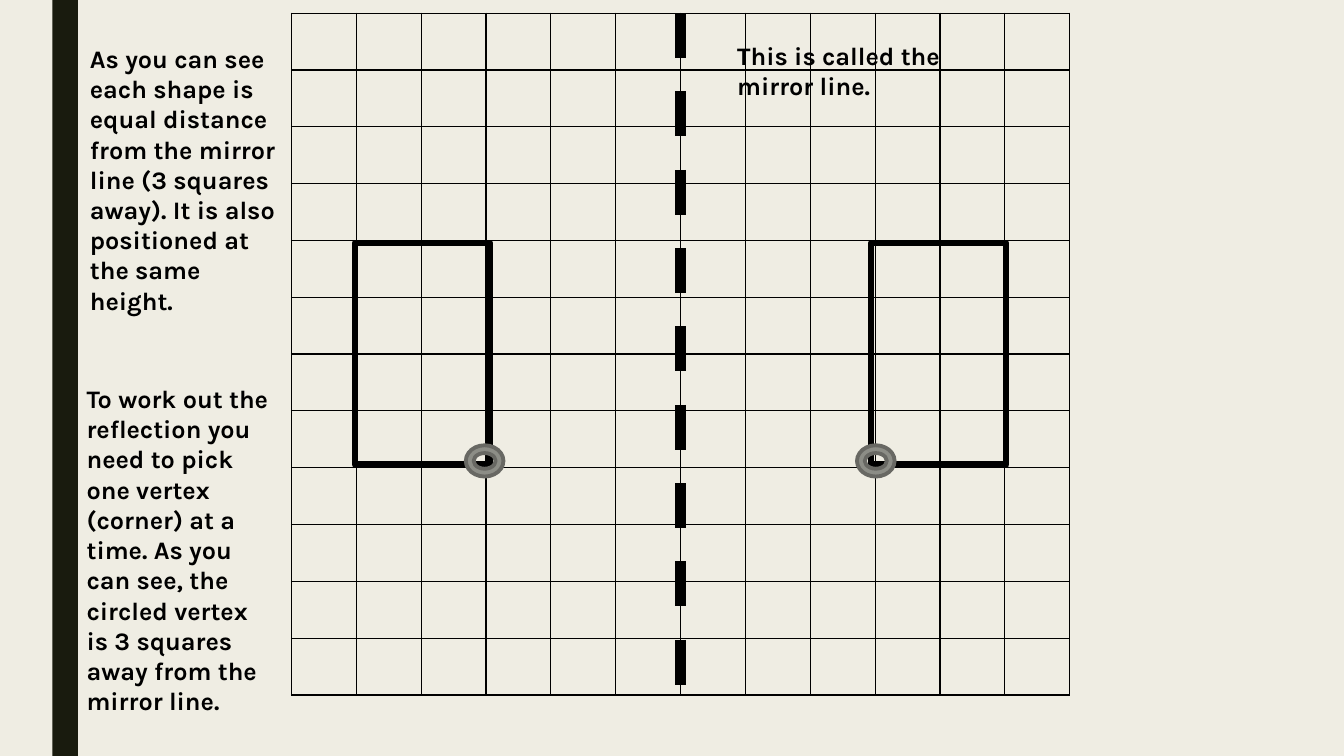
from dataclasses import dataclass

from lxml.etree import SubElement
from pptx import Presentation
from pptx.dml.color import RGBColor
from pptx.enum.dml import MSO_LINE
from pptx.enum.shapes import MSO_CONNECTOR, MSO_SHAPE as Preset
from pptx.enum.text import MSO_AUTO_SIZE as AutoSize
from pptx.oxml.ns import qn
from pptx.util import Inches, Pt

SLIDE_W, SLIDE_H = 13.33, 7.5
GRID_LEFT, GRID_TOP, GRID_W, GRID_H = 2.89, 0.13, 7.72, 6.77
CELLS = 12
MIRROR_COL = CELLS / 2
PAPER, INK, BAND = "EFEDE3", "000000", "191B0E"
RING_FILL, RING_EDGE = "8C8D86", "686863"


@dataclass(frozen=True)
class Area:
    """A region measured in grid columns and rows from the grid's corner."""
    col: float
    row: float
    cols: float
    rows: float

    def box(self) -> tuple:
        return (across(self.col), down(self.row),
                Inches(self.cols * GRID_W / CELLS), Inches(self.rows * GRID_H / CELLS))


@dataclass(frozen=True)
class Caption:
    """A bold explanation and the area it takes up."""
    area: Area
    words: str


@dataclass(frozen=True)
class Figure:
    """A preset shape with its outline and optional fill."""
    area: Area
    preset: Preset
    edge: str
    weight: float
    fill: str = ""


RECTANGLES = [Figure(Area(col, 4.04, 2.08, 3.9), Preset.RECTANGLE, INK, 4.5)
              for col in (0.98, 8.94)]
VERTEX_RINGS = [Figure(Area(col, 7.6, 0.58, 0.55), Preset.DONUT, RING_EDGE, 2.75, RING_FILL)
                for col in (2.69, 8.72)]
CAPTIONS = [
    Caption(Area(6.72, 0.39, 4.43, 1.26), "This is called the mirror line."),
    Caption(Area(-3.26, 0.44, 3.25, 4.47),
            "As you can see each shape is equal distance from the mirror line "
            "(3 squares away). It is also positioned at the same height."),
    Caption(Area(-3.31, 6.42, 3.22, 5.55),
            "To work out the reflection you need to pick one vertex (corner) at a time. "
            "As you can see, the circled vertex is 3 squares away from the mirror line."),
]


def across(col: float) -> int:
    """Return the horizontal position of a grid column."""
    return Inches(GRID_LEFT + col * GRID_W / CELLS)


def down(row: float) -> int:
    """Return the vertical position of a grid row."""
    return Inches(GRID_TOP + row * GRID_H / CELLS)


def paint(fill, colour: str) -> None:
    """Give a fill one solid colour."""
    fill.solid()
    fill.fore_color.rgb = RGBColor.from_string(colour)


def draw_band(slide) -> None:
    """Draw the dark band down the left side."""
    band = slide.shapes.add_shape(Preset.RECTANGLE, Inches(SLIDE_W * 0.039), 0,
                                  Inches(SLIDE_W * 0.019), Inches(SLIDE_H))
    band.shadow.inherit = False
    paint(band.fill, BAND)
    band.line.fill.background()


def rule_cell(cell) -> None:
    """Clear a cell's fill and rule its four sides."""
    properties = cell._tc.get_or_add_tcPr()
    for side in ("lnL", "lnR", "lnT", "lnB"):
        rule = SubElement(properties, qn(f"a:{side}"), w=str(Pt(1)))
        solid = SubElement(rule, qn("a:solidFill"))
        SubElement(solid, qn("a:srgbClr"), val=INK)
    cell.fill.background()


def draw_grid(slide) -> None:
    """Draw the squared grid as a table."""
    grid = slide.shapes.add_table(CELLS, CELLS, *Area(0, 0, CELLS, CELLS).box()).table
    grid.first_row = grid.horz_banding = False
    for cell in grid.iter_cells():
        rule_cell(cell)


def draw_figure(slide, figure: Figure) -> None:
    """Draw one outlined figure on the grid."""
    outline = slide.shapes.add_shape(figure.preset, *figure.area.box())
    outline.shadow.inherit = False
    if figure.fill:
        paint(outline.fill, figure.fill)
    else:
        outline.fill.background()
    paint(outline.line.fill, figure.edge)
    outline.line.width = Pt(figure.weight)


def draw_mirror_line(slide) -> None:
    """Draw the dashed mirror line down the middle of the grid."""
    mirror = slide.shapes.add_connector(MSO_CONNECTOR.STRAIGHT, across(MIRROR_COL), down(0),
                                        across(MIRROR_COL), down(CELLS))
    paint(mirror.line.fill, INK)
    mirror.line.width = Pt(8)
    mirror.line.dash_style = MSO_LINE.DASH
    SubElement(mirror._element.spPr, qn("a:effectLst"))


def write_caption(slide, caption: Caption) -> None:
    """Write one caption in its area."""
    frame = slide.shapes.add_textbox(*caption.area.box()).text_frame
    frame.word_wrap = True
    frame.auto_size = AutoSize.SHAPE_TO_FIT_TEXT
    frame.text = caption.words
    font = frame.paragraphs[0].runs[0].font
    font.name, font.size, font.bold = "Karla", Pt(18), True
    paint(font.fill, INK)


def main() -> None:
    """Build the reflection slide and save it."""
    deck = Presentation()
    deck.slide_width, deck.slide_height = Inches(SLIDE_W), Inches(SLIDE_H)
    slide = deck.slides.add_slide(deck.slide_layouts[6])
    paint(slide.background.fill, PAPER)
    draw_band(slide)
    draw_grid(slide)
    for rectangle in RECTANGLES:
        draw_figure(slide, rectangle)
    draw_mirror_line(slide)
    for caption in CAPTIONS:
        write_caption(slide, caption)
    for ring in VERTEX_RINGS:
        draw_figure(slide, ring)
    deck.save("out.pptx")


if __name__ == "__main__":
    main()
